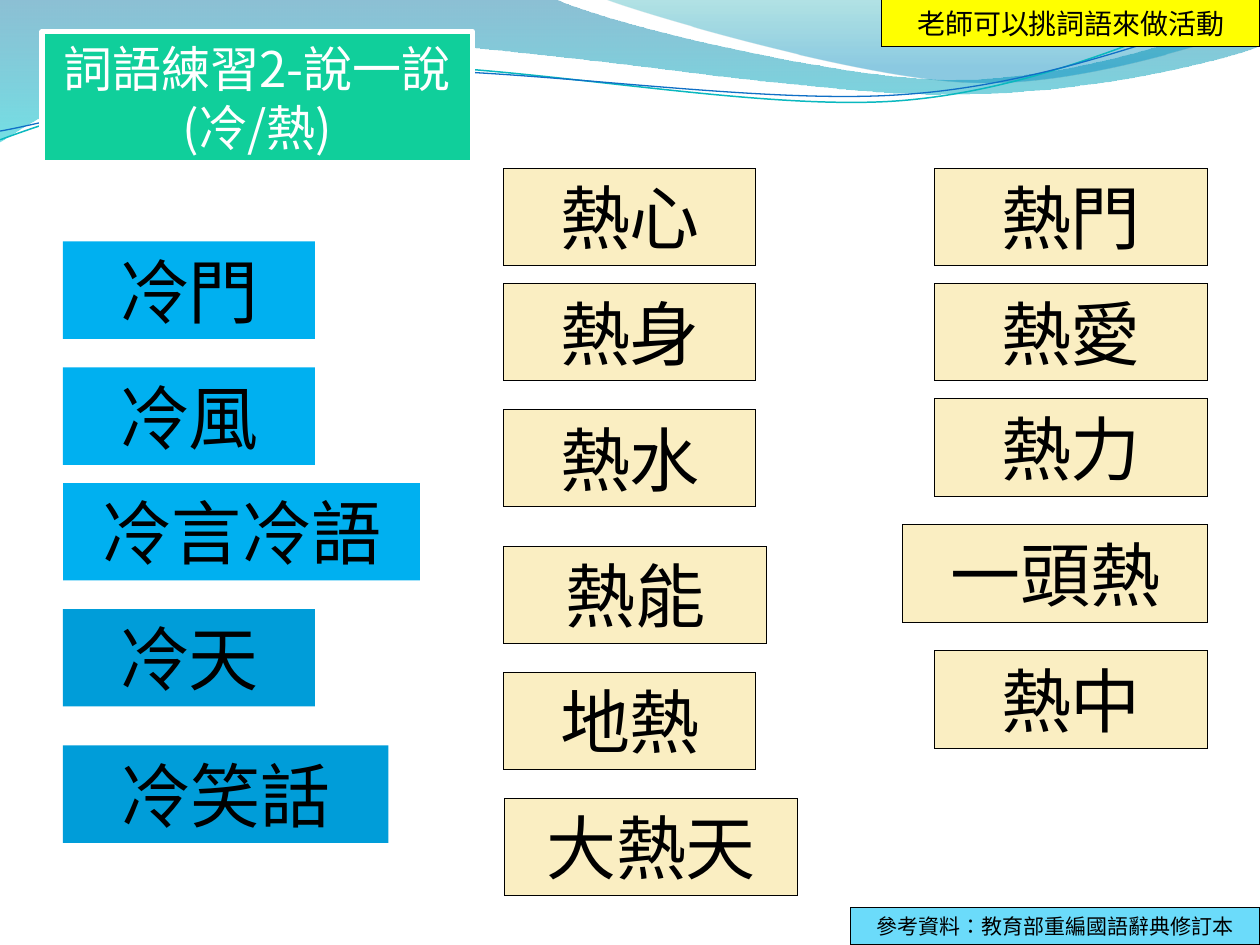
import math

import pptx
import pptx.util
import pptx.dml.color
import pptx.enum.shapes
import pptx.enum.text
import pptx.oxml
import pptx.oxml.ns

Pt = pptx.util.Pt
RGBColor = pptx.dml.color.RGBColor
qn = pptx.oxml.ns.qn
A = pptx.oxml.ns.nsdecls("a")

FONT = "Noto Sans CJK SC"
BLACK = RGBColor(0x00, 0x00, 0x00)
WHITE = RGBColor(0xFF, 0xFF, 0xFF)
GREEN = RGBColor(0x10, 0xCF, 0x9B)
YELLOW = RGBColor(0xFF, 0xFF, 0x00)
SKY = RGBColor(0x6B, 0xDB, 0xFA)
CREAM = RGBColor(0xFA, 0xEE, 0xC2)
COLD = RGBColor(0x00, 0xB0, 0xF0)
COLD_DARK = RGBColor(0x00, 0x9D, 0xD9)
WAVE_BLUE = RGBColor(0x00, 0x74, 0xA1)
WAVE_CYAN = RGBColor(0x00, 0xC6, 0xCF)
CREST_TEAL = RGBColor(0x00, 0xA1, 0xA9)
CREST_BLUE = RGBColor(0x00, 0x8B, 0xBF)
STRAND_TEAL = RGBColor(0x0A, 0xB8, 0xBF)
STRAND_BLUE = RGBColor(0x0F, 0x6F, 0xC6)

CARD_H = 55.7
RIGHT_EDGE = 690
STRAND_TILT = -2.7
STRAND_CENTER = (359.5, 42)

# Outlines: a start point, then straight (2 numbers) or cubic (6 numbers) segments
WAVE = [(0, 0), (316.8, -0.7),
        (342.7, 12.2, 478.1, 45.4, 545.8, 45.4),
        (614.2, 45.4, 689.8, 18.7, 720, 6.5), (720.7, 25.9),
        (707.8, 31.7, 626.4, 54.7, 537.1, 54),
        (447.8, 54, 275, 20.2, 185, 24.5),
        (92.9, 25.9, 33.1, 59.8, -0.7, 81.4), (0, 0)]
CREST = [(344.9, -0.7), (366.5, 7.9, 491, 44.6, 553.7, 46.8),
         (616.3, 49.7, 691.9, 23, 720, 15.1), (720, 0), (344.9, -0.7)]
TEAL_STRAND = [(0, 79.9), (34.6, 67, 113.8, 41, 199.4, 37.4),
               (284.4, 33.8, 427, 64.1, 513.4, 57.6),
               (599.8, 51.1, 675.4, 10.8, 718.6, -1.4)]
BLUE_STRAND = [(0, 74.9), (33.8, 69.1, 118.1, 43.9, 203.8, 40.3),
               (290.2, 36.7, 429.8, 60.5, 516.2, 54),
               (601.9, 48.2, 677.5, 15.1, 720, 4.3)]

# Word cards: text, top, width
COLD_WORDS = [("冷門", 138, 144, COLD), ("冷風", 210, 144, COLD),
              ("冷言冷語", 276, 204, COLD), ("冷天", 348, 144, COLD_DARK),
              ("冷笑話", 426, 186, COLD_DARK)]
HOT_WORDS = [("熱心", 96, 144), ("熱身", 162, 144), ("熱水", 234, 144),
             ("熱能", 312, 150), ("地熱", 384, 144), ("大熱天", 456, 168)]
MORE_HOT_WORDS = [("熱門", 96, 156), ("熱愛", 162, 156), ("熱力", 228, 156),
                  ("一頭熱", 300, 174), ("熱中", 372, 156)]


def turned(x, y, degrees):
    """Turn a point about the centre of the strands."""
    cx, cy = STRAND_CENTER
    c, s = math.cos(math.radians(degrees)), math.sin(math.radians(degrees))
    return cx + (x - cx) * c - (y - cy) * s, cy + (x - cx) * s + (y - cy) * c


class SlideBuilder:
    def __init__(self, slide):
        self.s = slide

    def outline(self, outline, close, tilt=0):
        segments = []
        for seg in outline:
            pairs = zip(seg[::2], seg[1::2])
            segments.append([tuple(Pt(v) for v in turned(x, y, -tilt))
                             for x, y in pairs])
        ends = [seg[-1] for seg in segments]
        builder = self.s.shapes.build_freeform(*ends[0])
        builder.add_line_segments(ends[1:], close=close)
        sp = builder.convert_to_shape()
        # Bend the segments that have control points
        left, top = sp.left, sp.top
        lines = list(sp._element.spPr.iter(qn("a:lnTo")))
        for line, seg in zip(lines, segments[1:]):
            if len(seg) == 3:
                points = "".join(f'<a:pt x="{x - left}" y="{y - top}"/>' for x, y in seg)
                line.getparent().replace(line, pptx.oxml.parse_xml(
                    f'<a:cubicBezTo {A}>{points}</a:cubicBezTo>'))
        sp.rotation = tilt
        sp.shadow.inherit = False
        return sp

    def wave(self, outline, stops):
        sp = self.outline(outline, True)
        sp.line.fill.background()
        sp.fill.gradient()
        sp.fill.gradient_angle = 270
        for stop, (position, color, _) in zip(sp.fill.gradient_stops, stops):
            stop.position = position
            stop.color.rgb = color
        colors = sp._element.spPr.iter(qn("a:srgbClr"))
        for clr, (_, _, opacity) in zip(colors, stops):
            clr.append(pptx.oxml.parse_xml(f'<a:alpha {A} val="{opacity * 1000}"/>'))

    def strand(self, outline, color, width):
        sp = self.outline(outline, False, STRAND_TILT)
        sp.fill.background()
        sp.line.color.rgb = color
        sp.line.width = Pt(width)

    def box(self, text, left, top, width, height, fill, size,
            line=BLACK, color=BLACK):
        sp = self.s.shapes.add_shape(
            pptx.enum.shapes.MSO_SHAPE.RECTANGLE,
            Pt(left), Pt(top), Pt(width), Pt(height))
        # Without the theme style the outline keeps its default thin width
        sp._element.remove(sp._element.find(qn("p:style")))
        sp.shadow.inherit = False
        sp.fill.solid()
        sp.fill.fore_color.rgb = fill
        if line is None:
            sp.line.fill.background()
        else:
            sp.line.color.rgb = line
        tf = sp.text_frame
        tf.word_wrap = True
        tf.vertical_anchor = pptx.enum.text.MSO_ANCHOR.MIDDLE
        tf.text = text
        p = tf.paragraphs[0]
        p.alignment = pptx.enum.text.PP_ALIGN.CENTER
        r = p.runs[0]
        r.font.size = Pt(size)
        r.font.name = FONT
        r.font.color.rgb = color
        rPr = r._r.get_or_add_rPr()
        rPr.set("lang", "zh-TW")
        rPr.append(pptx.oxml.parse_xml(f'<a:ea {A} typeface="{FONT}"/>'))
        return sp

    def card(self, text, left, top, width, fill=CREAM, line=BLACK):
        self.box(text, left, top, width, CARD_H, fill, 40, line)

    def title(self, text, left, top, width, height):
        sp = self.box(text, left, top, width, height, GREEN, 28, WHITE, WHITE)
        sp.line.width = Pt(3)
        sp.text_frame.paragraphs[0].line_spacing = Pt(34)


def main():
    prs = pptx.Presentation()
    prs.slide_width, prs.slide_height = Pt(720), Pt(540)
    b = SlideBuilder(prs.slides.add_slide(prs.slide_layouts[6]))

    # Waves along the top
    b.wave(WAVE, [(0, WAVE_BLUE, 45), (1, WAVE_CYAN, 55)])
    b.wave(CREST, [(0, CREST_TEAL, 30), (0.8, CREST_BLUE, 45)])
    b.strand(TEAL_STRAND, STRAND_TEAL, 0.85)
    b.strand(BLUE_STRAND, STRAND_BLUE, 0.75)

    # Title
    b.title("詞語練習2-說一說(冷/熱)", 24, 18, 246, 75)

    # Word cards
    for text, top, width, fill in COLD_WORDS:
        b.card(text, 36, top, width, fill, None)
    for text, top, width in HOT_WORDS:
        b.card(text, 288, top, width)
    for text, top, width in MORE_HOT_WORDS:
        b.card(text, RIGHT_EDGE - width, top, width)

    # Teacher's note and reference
    b.box("老師可以挑詞語來做活動", 504, 0, 216, 26.6, YELLOW, 16)
    b.box("參考資料：教育部重編國語辭典修訂本", 486, 518.4, 234, 21.6, SKY, 12)

    prs.save("out.pptx")


if __name__ == "__main__":
    main()
